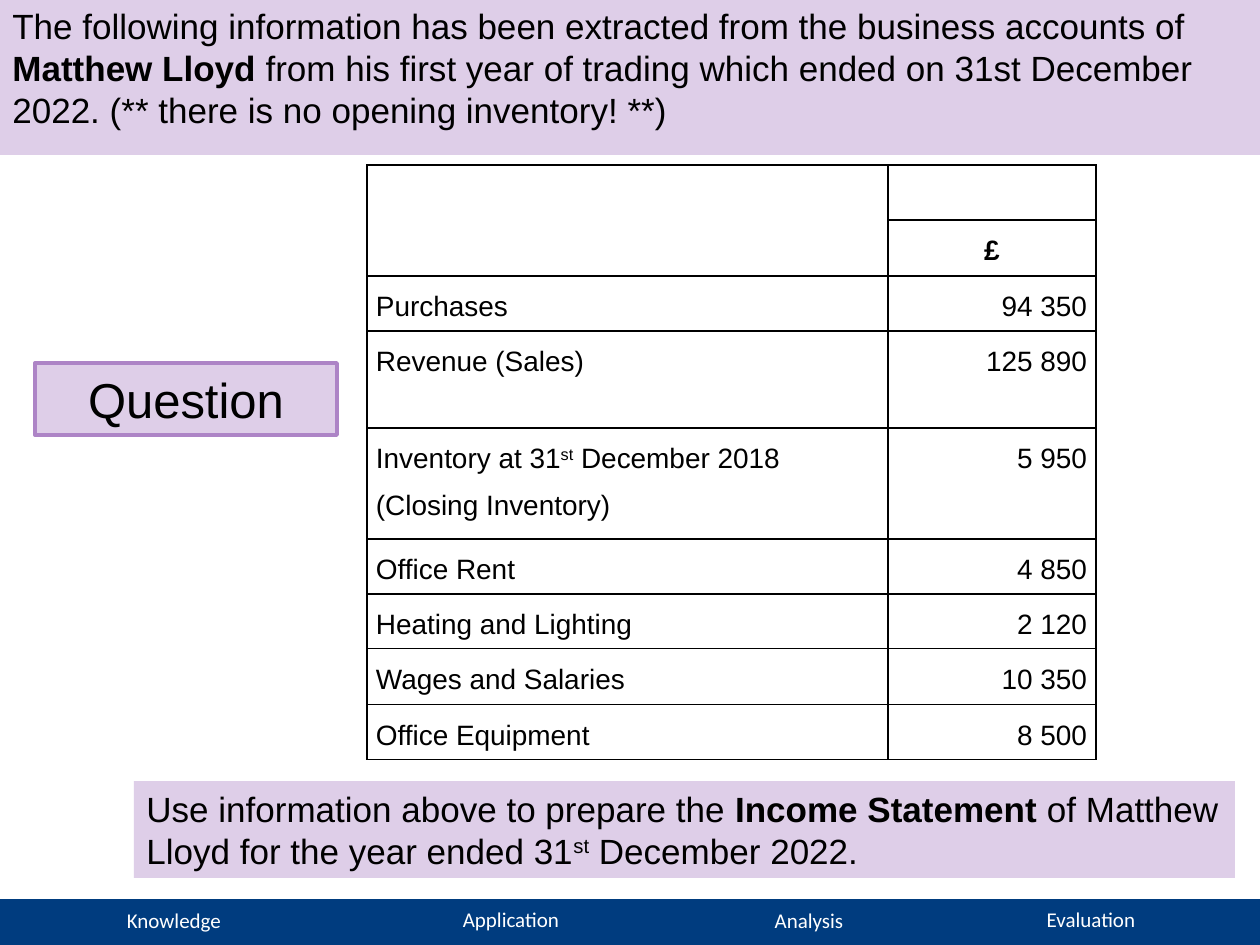
from lxml.etree import SubElement
from pptx import Presentation
from pptx.dml.color import RGBColor
from pptx.enum.shapes import MSO_SHAPE as Shape
from pptx.enum.text import MSO_ANCHOR as Anchor, PP_ALIGN as Align
from pptx.oxml.ns import qn
from pptx.util import Emu, Pt

PLAIN, BOLD, RAISED = "plain", "bold", "raised"


def px(length):
    return Emu(round(length * 914400 / 126))


def color(value):
    return RGBColor.from_string(value)


class SlideBuilder:
    font, ink, white = "Arial", "000000", "FFFFFF"
    lilac, purple, navy = "DECEE8", "AD84C6", "003C7F"

    def __init__(self, slide):
        self.slide = slide

    def add_text(self, paragraph, pieces, size, ink=ink, font=font, align=Align.LEFT):
        paragraph.alignment = align
        for text, style in pieces:
            run = paragraph.add_run()
            run.text = text
            run.font.name, run.font.size = font, Pt(size)
            run.font.bold = style == BOLD
            run.font.color.rgb = color(ink)
            if style == RAISED:
                run._r.get_or_add_rPr().set("baseline", "30000")

    def panel(self, box, fill, pieces=(), size=20, border=None,
              align=Align.LEFT, anchor=Anchor.TOP):
        shape = self.slide.shapes.add_shape(Shape.RECTANGLE, *map(px, box))
        shape.shadow.inherit = False
        shape.fill.solid()
        shape.fill.fore_color.rgb = color(fill)
        if border:
            shape.line.color.rgb = color(border)
            shape.line.width = Pt(2.25)
        else:
            shape.line.fill.background()
        frame = shape.text_frame
        frame.word_wrap, frame.vertical_anchor = True, anchor
        self.add_text(frame.paragraphs[0], pieces, size, align=align)

    def label(self, box, text):
        frame = self.slide.shapes.add_textbox(*map(px, box)).text_frame
        frame.word_wrap = True
        self.add_text(frame.paragraphs[0], [(text, PLAIN)], 12, self.white, "Calibri", Align.CENTER)

    def style_cell(self, cell):
        properties = cell._tc.get_or_add_tcPr()
        for side in ("a:lnL", "a:lnR", "a:lnT", "a:lnB"):
            line = SubElement(properties, qn(side), w=str(Pt(1)))
            fill = SubElement(line, qn("a:solidFill"))
            SubElement(fill, qn("a:srgbClr"), val=self.ink)
        cell.fill.background()
        cell.margin_left = cell.margin_right = px(9)
        cell.margin_top = cell.margin_bottom = 0

    def table(self, left, top, widths, heights, rows):
        box = map(px, (left, top, sum(widths), sum(heights)))
        table = self.slide.shapes.add_table(len(heights), len(widths), *box).table
        table.first_row = table.horz_banding = False
        for column, width in zip(table.columns, widths):
            column.width = px(width)
        for row, height in zip(table.rows, heights):
            row.height = px(height)
            for cell in row.cells:
                self.style_cell(cell)
        table.cell(0, 0).merge(table.cell(1, 0))
        self.fill_cell(table.cell(1, 1), [("£", BOLD)], Align.CENTER)
        for index, (item, amount) in enumerate(rows, start=2):
            self.fill_cell(table.cell(index, 0), item, Align.LEFT)
            self.fill_cell(table.cell(index, 1), [(amount, PLAIN)], Align.RIGHT)

    def fill_cell(self, cell, pieces, align):
        paragraph = cell.text_frame.paragraphs[0]
        paragraph.line_spacing = 1.5
        self.add_text(paragraph, pieces, 16, align=align)


def main():
    presentation = Presentation()
    presentation.slide_width, presentation.slide_height = px(1260), px(945)
    slide = presentation.slides.add_slide(presentation.slide_layouts[6])
    builder = SlideBuilder(slide)

    builder.panel((0, 899, 1260, 46), builder.navy)
    skills = [("Knowledge", 5, 901), ("Application", 342, 900),
              ("Analysis", 640, 901), ("Evaluation", 922, 900)]
    for text, left, top in skills:
        builder.label((left, top, 338, 38), text)

    builder.panel((0, -2, 1260, 157), builder.lilac, [
        ("The following information has been extracted from the business accounts of ", PLAIN),
        ("Matthew Lloyd", BOLD),
        (" from his first year of trading which ended on 31st December 2022. "
         "(** there is no opening inventory! **)", PLAIN)])

    inventory = [("Inventory at 31", PLAIN), ("st", RAISED),
                 (" December 2018 (Closing Inventory)", PLAIN)]
    builder.table(367, 165, (521, 208), (55, 56, 55, 97, 111, 55, 55, 56, 55), [
        ([("Purchases", PLAIN)], "94 350"),
        ([("Revenue (Sales)", PLAIN)], "125 890"),
        (inventory, "5 950"),
        ([("Office Rent", PLAIN)], "4 850"),
        ([("Heating and Lighting", PLAIN)], "2 120"),
        ([("Wages and Salaries", PLAIN)], "10 350"),
        ([("Office Equipment", PLAIN)], "8 500")])

    builder.panel((134, 781, 1101, 97), builder.lilac, [
        ("Use information above to prepare the ", PLAIN),
        ("Income Statement ", BOLD),
        ("of Matthew Lloyd for the year ended 31", PLAIN),
        ("st", RAISED),
        (" December 2022.", PLAIN)])
    builder.panel((35, 363, 302, 72), builder.lilac, [("Question", PLAIN)], 28,
                  builder.purple, Align.CENTER, Anchor.MIDDLE)

    presentation.save("out.pptx")


if __name__ == "__main__":
    main()
